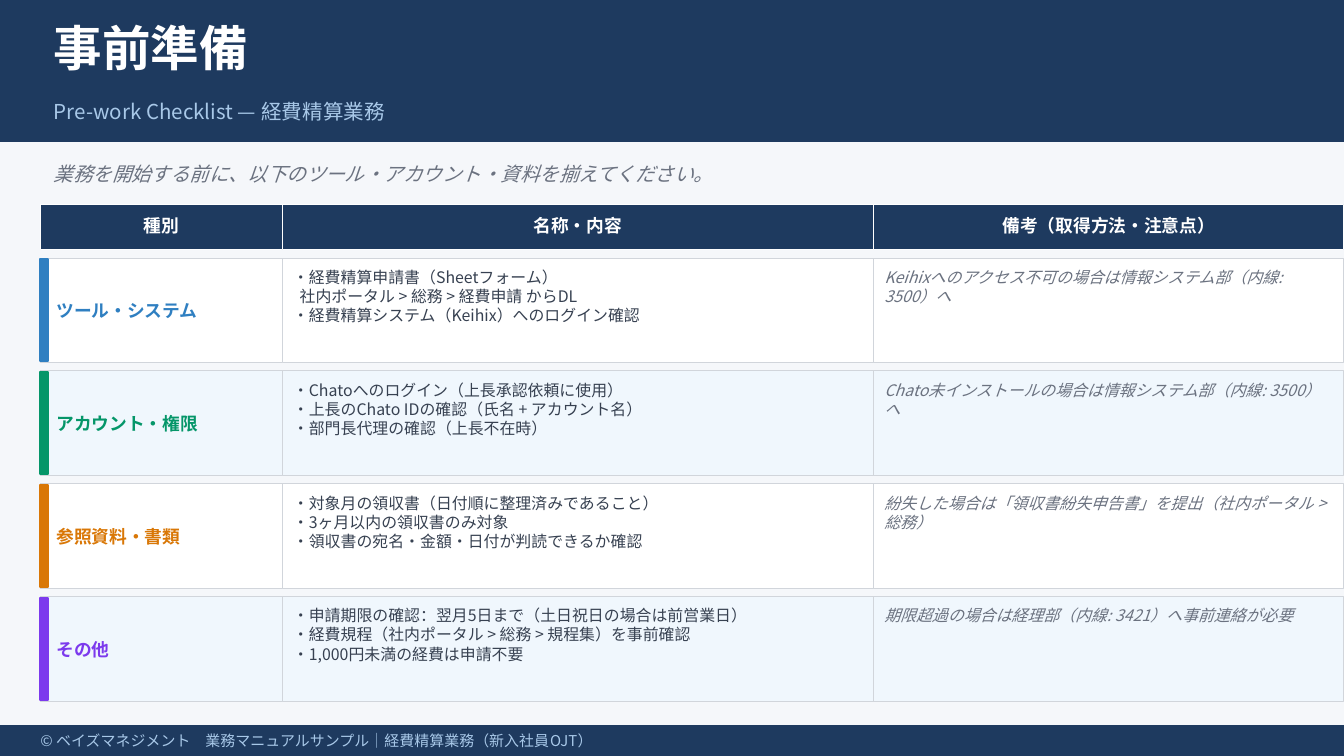
import pptx
import pptx.dml.color
import pptx.enum.shapes
import pptx.enum.text
import pptx.oxml
import pptx.oxml.ns
import pptx.util

Inches, Pt = pptx.util.Inches, pptx.util.Pt
ALIGN, ANCHOR = pptx.enum.text.PP_ALIGN, pptx.enum.text.MSO_ANCHOR
FONT = "Noto Sans CJK JP"
NAVY, WHITE, PALE, GRAY = "1E3A5F", "FFFFFF", "A8C8E8", "6B7280"
rgb = pptx.dml.color.RGBColor.from_string

prs = pptx.Presentation()
prs.slide_width, prs.slide_height = Inches(10), Inches(5.625)
s = prs.slides.add_slide(prs.slide_layouts[6])
s.background.fill.solid()
s.background.fill.fore_color.rgb = rgb("F5F7FA")


def rect(x, y, w, h, fill, line, width):
    sp = s.shapes.add_shape(pptx.enum.shapes.MSO_SHAPE.RECTANGLE,
                            Inches(x), Inches(y), Inches(w), Inches(h))
    sp.shadow.inherit = False
    sp.fill.solid()
    sp.fill.fore_color.rgb = rgb(fill)
    sp.line.color.rgb = rgb(line)
    sp.line.width = Pt(width)


def text(x, y, w, h, content, size, color, bold=False, italic=False,
         align=ALIGN.LEFT, anchor=ANCHOR.MIDDLE, inset=0):
    """Add a text box with one paragraph per line and return its text frame."""
    tf = s.shapes.add_textbox(Inches(x), Inches(y), Inches(w), Inches(h)).text_frame
    tf.word_wrap = True
    tf.vertical_anchor = anchor
    tf.margin_left = tf.margin_right = tf.margin_top = tf.margin_bottom = Inches(inset)
    tf.text = content
    for p in tf.paragraphs:
        p.alignment = align
        for r in p.runs:
            r.font.size, r.font.bold, r.font.italic = Pt(size), bold, italic
            r.font.color.rgb = rgb(color)
            r.font.name = FONT
            ea = pptx.oxml.parse_xml(f'<a:ea {pptx.oxml.ns.nsdecls("a")} typeface="{FONT}"/>')
            r.font._element.append(ea)
    return tf


# Title band, footer and lead sentence
rect(0, 0, 10, 1.05, NAVY, NAVY, 1)
text(0.4, 0.05, 8, 0.6, "事前準備", 26, WHITE, bold=True)
text(0.4, 0.65, 8, 0.35, "Pre-work Checklist — 経費精算業務", 11, PALE)
rect(0, 5.4, 10, 0.225, NAVY, NAVY, 1)
text(0.3, 5.41, 9.4, 0.2,
     "© ベイズマネジメント　業務マニュアルサンプル｜経費精算業務（新入社員OJT）", 8, PALE)
text(0.4, 1.15, 9.2, 0.28,
     "業務を開始する前に、以下のツール・アカウント・資料を揃えてください。", 10.5, GRAY, italic=True)

# Checklist grid: column left edges and widths, row pitch
columns = [(0.3, 1.8), (2.1, 4.4), (6.5, 3.5)]
(kind_x, _), (item_x, item_w), (note_x, note_w) = columns
pad = 0.05
first_row, row_h, pitch = 1.92, 0.78, 0.84

for (x, w), heading in zip(columns, ["種別", "名称・内容", "備考（取得方法・注意点）"]):
    rect(x, 1.52, w, 0.34, NAVY, WHITE, 0.5)
    text(x + pad, 1.55, w - 2 * pad, 0.26, heading, 9.5, WHITE, bold=True, align=ALIGN.CENTER)

rows = [
    ("ツール・システム", "2F7FC1",
     ["・経費精算申請書（Sheetフォーム）",
      "社内ポータル > 総務 > 経費申請 からDL",
      "・経費精算システム（Keihix）へのログイン確認"],
     "Keihixへのアクセス不可の場合は情報システム部（内線: 3500）へ"),
    ("アカウント・権限", "059669",
     ["・Chatoへのログイン（上長承認依頼に使用）",
      "・上長のChato IDの確認（氏名 + アカウント名）",
      "・部門長代理の確認（上長不在時）"],
     "Chato未インストールの場合は情報システム部（内線: 3500）へ"),
    ("参照資料・書類", "D97706",
     ["・対象月の領収書（日付順に整理済みであること）",
      "・3ヶ月以内の領収書のみ対象",
      "・領収書の宛名・金額・日付が判読できるか確認"],
     "紛失した場合は「領収書紛失申告書」を提出（社内ポータル > 総務）"),
    ("その他", "7C3AED",
     ["・申請期限の確認：翌月5日まで（土日祝日の場合は前営業日）",
      "・経費規程（社内ポータル > 総務 > 規程集）を事前確認",
      "・1,000円未満の経費は申請不要"],
     "期限超過の場合は経理部（内線: 3421）へ事前連絡が必要"),
]

for i, (kind, accent, items, note) in enumerate(rows):
    y = first_row + i * pitch
    for x, w in columns:
        rect(x, y, w, row_h, [WHITE, "F0F7FD"][i % 2], "D1D5DB", 0.5)
    rect(kind_x, y + 0.01, 0.06, row_h - 0.02, accent, accent, 1)
    text(kind_x + 0.12, y + 0.16, 1.62, 0.46, kind, 9.5, accent, bold=True)
    tf = text(item_x + pad, y + 0.04, item_w - 2 * pad, 0.7, "\n".join(items), 8.5, "374151",
              anchor=ANCHOR.TOP, inset=0.03)
    for p in tf.paragraphs:
        if not p.text.startswith("・"):  # continuation of the item above
            p._p.get_or_add_pPr().set("marL", str(Inches(0.05)))
    text(note_x + pad, y + 0.04, note_w - 2 * pad, 0.7, note, 8.5, GRAY, italic=True,
         anchor=ANCHOR.TOP, inset=0.03)

prs.save("out.pptx")
